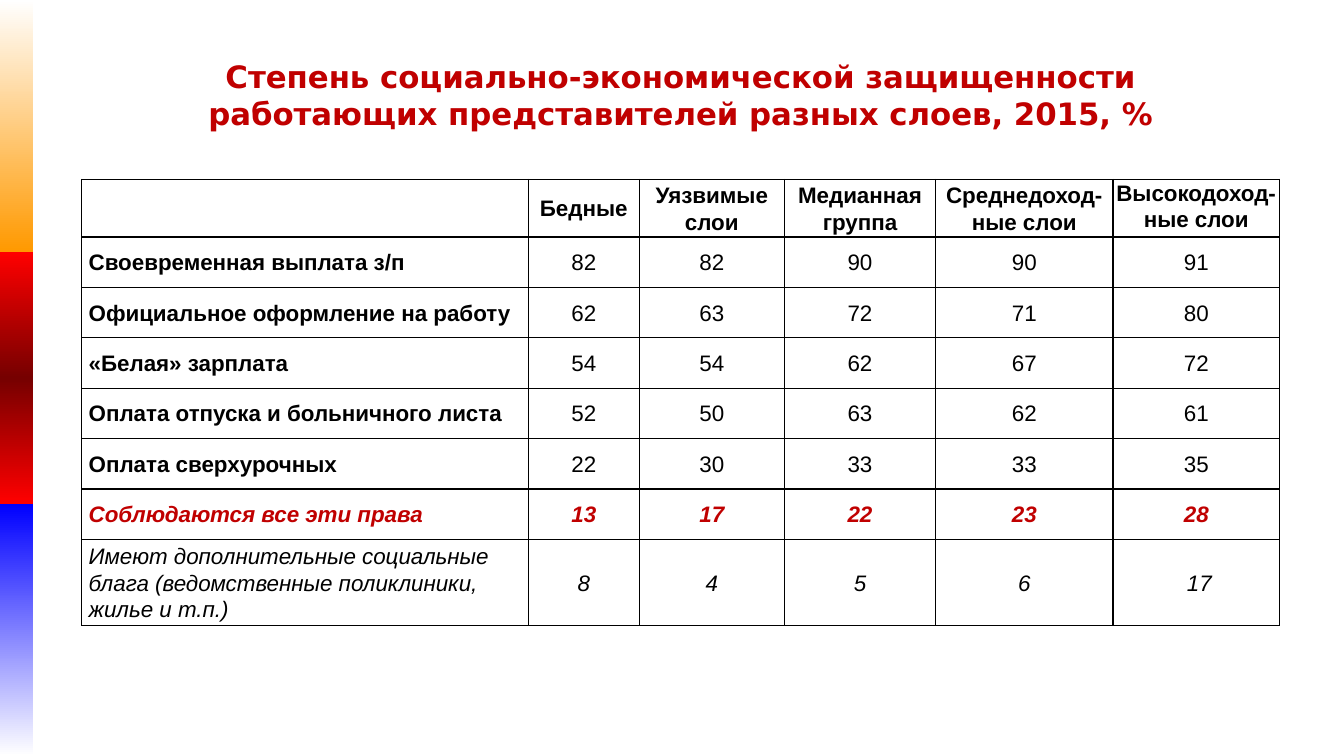
import pptx
import pptx.util
import pptx.dml.color
import pptx.enum.shapes
import pptx.enum.text
import pptx.oxml
import pptx.oxml.ns
from lxml import etree

# Content
TITLE = ("Степень социально-экономической защищенности "
         "работающих представителей разных слоев, 2015, %")
HEAD = ["", "Бедные", "Уязвимые слои", "Медианная группа",
        "Среднедоход-ные слои", "Высокодоход-ные слои"]
ROWS = [
    ("plain", "Своевременная выплата з/п", 82, 82, 90, 90, 91),
    ("plain", "Официальное оформление на работу", 62, 63, 72, 71, 80),
    ("plain", "«Белая» зарплата", 54, 54, 62, 67, 72),
    ("plain", "Оплата отпуска и больничного листа", 52, 50, 63, 62, 61),
    ("plain", "Оплата сверхурочных", 22, 30, 33, 33, 35),
    ("total", "Соблюдаются все эти права", 13, 17, 22, 23, 28),
    ("extra", "Имеют дополнительные социальные блага "
              "(ведомственные поликлиники, жилье и т.п.)", 8, 4, 5, 6, " 17"),
]
HEX = {"ink": "000000", "paper": "FFFFFF", "accent": "C00000",
       "gold": "FF9900", "red": "FF0000", "dark": "760000", "blue": "0000FF"}
BARS = [("paper", "gold"), ("red", "dark", "red"), ("blue", "paper")]
# Row look: label bold, value bold, italic, colour
LOOK = {"head": (True, True, False, "ink"),
        "plain": (True, False, False, "ink"),
        "total": (True, True, True, "accent"),
        "extra": (False, False, True, "ink")}

# Grid, in inches
WIDE, HIGH = 13.33, 7.5
BAR = 0.33
LEFT, TOP = 0.81, 1.78
COLS = [4.43, 1.1, 1.44, 1.5, 1.76, 1.65]
FIRST, STEP = 0.31, 0.5
PAD = 0.07

Inches, Pt = pptx.util.Inches, pptx.util.Pt
ALIGN = pptx.enum.text.PP_ALIGN
ANCHOR = pptx.enum.text.MSO_ANCHOR
qn = pptx.oxml.ns.qn


def paint(name):
    return pptx.dml.color.RGBColor.from_string(HEX[name])


def add_run(para, text, size, face, color, bold, slant=False):
    run = para.add_run()
    run.text = text
    font = run.font
    font.size, font.name = Pt(size), face
    font.bold, font.italic = bold, slant
    font.color.rgb = paint(color)


def blend(shape, names):
    """Fill a shape from top to bottom with evenly spaced colours."""
    shape.fill.gradient()
    shape.fill.gradient_angle = 270
    stops = shape._element.spPr.find(".//" + qn("a:gsLst"))
    for old in list(stops):
        stops.remove(old)
    for n, name in enumerate(names):
        place = 100000 * n // (len(names) - 1)
        stop = etree.SubElement(stops, qn("a:gs"), pos=str(place))
        etree.SubElement(stop, qn("a:srgbClr"), val=HEX[name])


def frame(cell):
    """Draw thin lines on all four sides of a cell."""
    props = cell._tc.get_or_add_tcPr()
    for side in "LRTB":
        line = etree.SubElement(props, qn("a:ln" + side), w=str(Pt(1)))
        fill = etree.SubElement(line, qn("a:solidFill"))
        etree.SubElement(fill, qn("a:srgbClr"), val=HEX["ink"])


def fill_cell(cell, text, kind, col):
    frame(cell)
    cell.fill.solid()
    cell.fill.fore_color.rgb = paint("paper")
    last = col == len(COLS) - 1
    cell.margin_left = cell.margin_right = Inches(0 if last else PAD)
    cell.margin_top = cell.margin_bottom = 0
    head = kind == "head"
    cell.vertical_anchor = ANCHOR.TOP if head and last else ANCHOR.MIDDLE
    para = cell.text_frame.paragraphs[0]
    para.font.size = Pt(16)
    if not text:
        return
    para.alignment = ALIGN.CENTER if col else ALIGN.LEFT
    para.line_spacing = 1.07
    para.space_after = Pt(8 if head else 0)
    label, value, slant, color = LOOK[kind]
    add_run(para, text, 16, "Arial", color, value if col else label, slant)


def main():
    deck = pptx.Presentation()
    deck.slide_width, deck.slide_height = Inches(WIDE), Inches(HIGH)
    slide = deck.slides.add_slide(deck.slide_layouts[5])

    # Side bars
    tall = HIGH / len(BARS)
    for n, names in enumerate(BARS):
        bar = slide.shapes.add_shape(
            pptx.enum.shapes.MSO_SHAPE.RECTANGLE,
            0, Inches(n * tall), Inches(BAR), Inches(tall))
        bar.shadow.inherit = False
        bar.line.fill.background()
        blend(bar, names)

    # Table
    data = [("head", *HEAD)] + ROWS
    deep = [FIRST] + [STEP] * len(ROWS)
    table = slide.shapes.add_table(
        len(data), len(COLS), Inches(LEFT), Inches(TOP),
        Inches(sum(COLS)), Inches(sum(deep))).table
    table.first_row = table.horz_banding = False
    for col, size in zip(table.columns, COLS):
        col.width = Inches(size)
    for r, (kind, *texts) in enumerate(data):
        table.rows[r].height = Inches(deep[r])
        for c, text in enumerate(texts):
            fill_cell(table.cell(r, c), str(text), kind, c)

    # Title
    title = slide.shapes.title
    title.left, title.top = Inches(1.04), Inches(0.52)
    title.width, title.height = Inches(11.42), Inches(0.84)
    box = title.text_frame
    box.word_wrap = True
    box.auto_size = pptx.enum.text.MSO_AUTO_SIZE.SHAPE_TO_FIT_TEXT
    box.vertical_anchor = ANCHOR.TOP
    para = box.paragraphs[0]
    para.alignment = ALIGN.CENTER
    add_run(para, TITLE, 22, "DejaVu Sans", "accent", True)

    deck.save("out.pptx")


if __name__ == "__main__":
    main()
